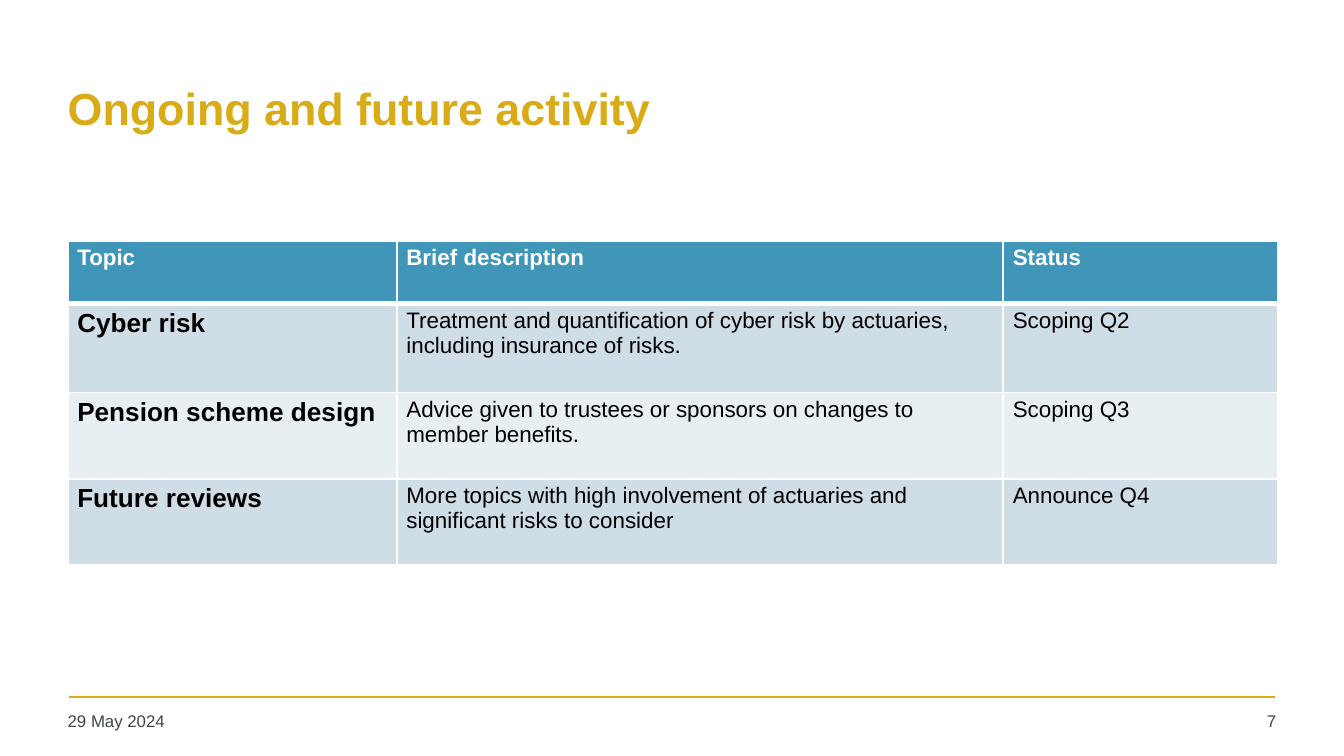
from dataclasses import dataclass

from lxml import etree
from pptx import Presentation
from pptx.dml.color import RGBColor
from pptx.enum.shapes import MSO_CONNECTOR
from pptx.enum.text import MSO_ANCHOR, PP_ALIGN
from pptx.oxml.ns import qn
from pptx.util import Cm, Pt

LEFT, RIGHT = PP_ALIGN.LEFT, PP_ALIGN.RIGHT
TOP, MIDDLE = MSO_ANCHOR.TOP, MSO_ANCHOR.MIDDLE
STRAIGHT = MSO_CONNECTOR.STRAIGHT
TITLE_ONLY = 5


@dataclass(frozen=True)
class Theme:
    """Colours, font and type sizes of the slide."""
    font: str = "Arial"
    gold: str = "D9AB16"
    grey: str = "3F4548"
    white: str = "FFFFFF"
    black: str = "000000"
    header: str = "4096B8"
    bands: tuple = ("CFDDE6", "E8EFF3")
    title_size: int = 24
    topic_size: int = 14
    body_size: int = 12
    footer_size: int = 9


THEME = Theme()
COL_WIDTHS = (6.22, 11.46, 5.18)
ROW_HEIGHTS = (1.19, 1.68, 1.63, 1.63)
ROWS = (
    ("Topic", "Brief description", "Status"),
    ("Cyber risk",
     "Treatment and quantification of cyber risk by actuaries, including insurance of risks.",
     "Scoping Q2"),
    ("Pension scheme design",
     "Advice given to trustees or sponsors on changes to member benefits.",
     "Scoping Q3"),
    ("Future reviews",
     "More topics with high involvement of actuaries and significant risks to consider",
     "Announce Q4"),
)


def write(tf, text, size, color, bold=False, align=LEFT):
    """Write one formatted run into the first paragraph of a text frame."""
    p = tf.paragraphs[0]
    p.alignment = align
    r = p.add_run()
    r.text = text
    r.font.name = THEME.font
    r.font.size = Pt(size)
    r.font.bold = bold
    r.font.color.rgb = RGBColor.from_string(color)


def set_margins(target):
    """Give a text frame or table cell the common insets."""
    target.margin_left = target.margin_right = Cm(0.18)
    target.margin_top = target.margin_bottom = Cm(0.09)


def set_borders(cell, widths):
    """Draw white borders, with widths in points by side tag."""
    tc_pr = cell._tc.get_or_add_tcPr()
    for side, width in widths.items():
        ln = etree.SubElement(tc_pr, qn(f"a:{side}"), w=str(Pt(width)))
        fill = etree.SubElement(ln, qn("a:solidFill"))
        etree.SubElement(fill, qn("a:srgbClr"), val=THEME.white)


def add_title(s, box, text):
    """Place and format the title placeholder in the box."""
    sp = s.shapes.title
    sp.left, sp.top, sp.width, sp.height = map(Cm, box)
    tf = sp.text_frame
    set_margins(tf)
    tf.vertical_anchor = MIDDLE
    write(tf, text, THEME.title_size, THEME.gold, bold=True)


def add_activity_table(s, box):
    """Build the activity table with its top left corner in the box."""
    table = s.shapes.add_table(len(ROWS), len(COL_WIDTHS), *map(Cm, box)).table
    for col, width in zip(table.columns, COL_WIDTHS):
        col.width = Cm(width)
    for i, (row, height, texts) in enumerate(zip(table.rows, ROW_HEIGHTS, ROWS)):
        row.height = Cm(height)
        head = i == 0
        fill = THEME.header if head else THEME.bands[(i - 1) % 2]
        color = THEME.white if head else THEME.black
        borders = {"lnL": 1, "lnR": 1, "lnT": 3 if i == 1 else 1, "lnB": 3 if head else 1}
        for j, (cell, text) in enumerate(zip(row.cells, texts)):
            topic = j == 0 and not head
            set_margins(cell)
            cell.vertical_anchor = TOP
            set_borders(cell, borders)
            cell.fill.solid()
            cell.fill.fore_color.rgb = RGBColor.from_string(fill)
            size = THEME.topic_size if topic else THEME.body_size
            write(cell.text_frame, text, size, color, bold=head or topic)


def add_footer(s, box, date, number):
    """Draw the rule at the top of the box, with date and page number below."""
    x, y, w, h = box
    line = s.shapes.add_connector(STRAIGHT, Cm(x), Cm(y), Cm(x + w), Cm(y))
    line.line.color.rgb = RGBColor.from_string(THEME.gold)
    line.line.width = Pt(1)
    etree.SubElement(line._element.spPr, qn("a:effectLst"))
    inset, gap, date_w, number_w = 0.2, 0.17, 5.6, 1.8
    parts = ((x - inset, date_w, date, LEFT),
             (x + w + inset - number_w, number_w, number, RIGHT))
    for left, width, text, align in parts:
        sp = s.shapes.add_textbox(Cm(left), Cm(y + gap), Cm(width), Cm(h - gap))
        tf = sp.text_frame
        tf.word_wrap = True
        set_margins(tf)
        write(tf, text, THEME.footer_size, THEME.grey, align=align)


def main():
    """Build and save the slide."""
    prs = Presentation()
    prs.slide_width, prs.slide_height = Cm(25.4), Cm(14.29)
    s = prs.slides.add_slide(prs.slide_layouts[TITLE_ONLY])
    add_title(s, (1.1, 0.84, 23.04, 2.39), "Ongoing and future activity")
    add_activity_table(s, (1.28, 4.55, sum(COL_WIDTHS), sum(ROW_HEIGHTS)))
    add_footer(s, (1.3, 13.18, 22.8, 0.87), "29 May 2024", "7")
    prs.save("out.pptx")


if __name__ == "__main__":
    main()
